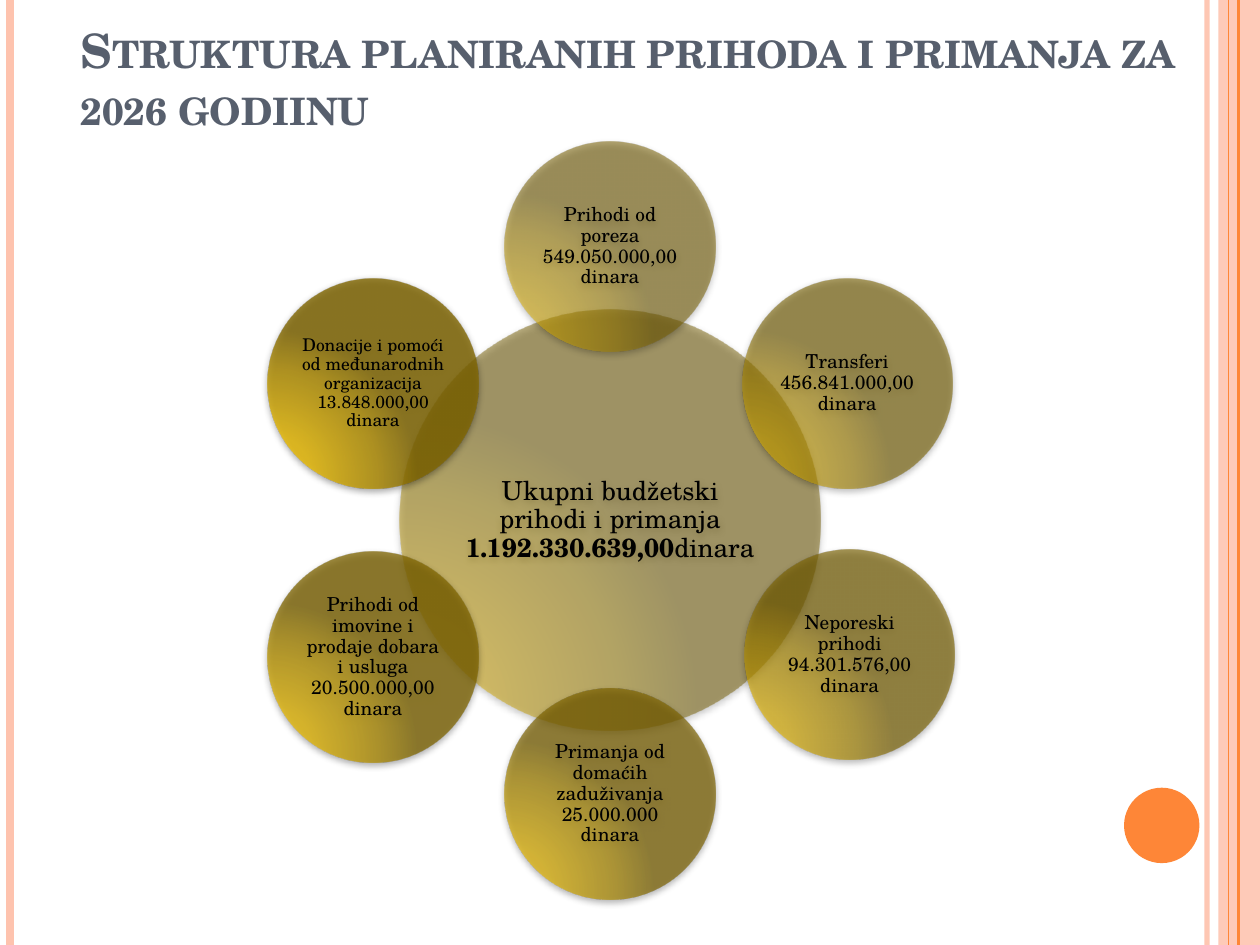
from math import cos, radians, sin
from lxml import etree
from pptx import Presentation
from pptx.dml.color import RGBColor
from pptx.enum.shapes import MSO_CONNECTOR as CONNECTOR, MSO_SHAPE as SHAPE
from pptx.enum.text import MSO_ANCHOR as ANCHOR, MSO_AUTO_SIZE as AUTO_SIZE, PP_ALIGN as ALIGN
from pptx.oxml import parse_xml
from pptx.oxml.ns import qn
from pptx.util import Cm, Pt

FONT = "TeX Gyre Schola"
NAMESPACE = "http://schemas.openxmlformats.org/drawingml/2006/main"
COLORS = {"peach": "FEC3AE", "orange": "FE8637", "slate": "575F6D", "black": "000000"}
GRADIENT_POSITIONS = (0, 30, 75, 100)


def set_alpha(fill_element, percent):
    color = fill_element.find(".//" + qn("a:srgbClr"))
    etree.SubElement(color, qn("a:alpha"), val=str(percent * 1000))


def add_circle(slide, center_x, center_y, diameter, gradient, opacity, runs, size, inset):
    shape = slide.shapes.add_shape(SHAPE.OVAL, Cm(center_x - diameter / 2),
                                   Cm(center_y - diameter / 2), Cm(diameter), Cm(diameter))
    shape.line.fill.background()
    stops = "".join(
        f'<a:gs pos="{position * 1000}"><a:srgbClr val="{color}">'
        f'<a:alpha val="{opacity * 1000}"/></a:srgbClr></a:gs>'
        for position, color in zip(GRADIENT_POSITIONS, gradient))
    fill = parse_xml(
        f'<a:gradFill xmlns:a="{NAMESPACE}" rotWithShape="1"><a:gsLst>{stops}</a:gsLst>'
        '<a:path path="circle"><a:fillToRect l="5000" t="100000" r="120000" b="10000"/>'
        '</a:path></a:gradFill>')
    shadow = parse_xml(
        f'<a:effectLst xmlns:a="{NAMESPACE}"><a:outerShdw blurRad="{Pt(4)}" dist="{Pt(1.6)}" '
        f'dir="5400000" rotWithShape="0"><a:srgbClr val="{COLORS["black"]}">'
        '<a:alpha val="42000"/></a:srgbClr></a:outerShdw></a:effectLst>')
    properties = shape._element.spPr
    properties.find(qn("a:prstGeom")).addnext(fill)
    properties.append(shadow)

    frame = shape.text_frame
    frame_format = {"word_wrap": True, "vertical_anchor": ANCHOR.MIDDLE,
                    "margin_left": Cm(inset), "margin_right": Cm(inset),
                    "margin_top": Cm(inset), "margin_bottom": Cm(inset)}
    for name, value in frame_format.items():
        setattr(frame, name, value)
    paragraph = frame.paragraphs[0]
    paragraph.alignment = ALIGN.CENTER
    paragraph.line_spacing = 0.9
    for text, bold in runs:
        run = paragraph.add_run()
        run.text = text
        for name, value in {"name": FONT, "size": Pt(size), "bold": bold}.items():
            setattr(run.font, name, value)
        run.font.color.rgb = RGBColor.from_string(COLORS["black"])


presentation = Presentation()
presentation.slide_width = Cm(25.4)
presentation.slide_height = Cm(19.05)
slide = presentation.slides.add_slide(presentation.slide_layouts[5])

title = slide.shapes.title
title_box = {"left": Cm(1.37), "top": Cm(0.69), "width": Cm(22.86), "height": Cm(2.16)}
for name, value in title_box.items():
    setattr(title, name, value)
title.text_frame.text = "Struktura planiranih prihoda i primanja za 2026 godiinu"
title.text_frame.auto_size = AUTO_SIZE.NONE
title.text_frame.vertical_anchor = ANCHOR.BOTTOM
title_paragraph = title.text_frame.paragraphs[0]
title_paragraph.alignment = ALIGN.LEFT
title_run = title_paragraph.runs[0]
for name, value in {"name": FONT, "size": Pt(27), "bold": True}.items():
    setattr(title_run.font, name, value)
title_run.font.color.rgb = RGBColor.from_string(COLORS["slate"])
title_run._r.get_or_add_rPr().set("cap", "small")

decorations = [
    (SHAPE.RECTANGLE, 24.56, 0, 0.84, 19.05, "peach", 87),
    (SHAPE.OVAL, 22.66, 15.88, 1.52, 1.52, "orange", 100),
]
for kind, left, top, width, height, color, opacity in decorations:
    shape = slide.shapes.add_shape(kind, Cm(left), Cm(top), Cm(width), Cm(height))
    shape.shadow.inherit = False
    shape.line.fill.background()
    shape.fill.solid()
    shape.fill.fore_color.rgb = RGBColor.from_string(COLORS[color])
    set_alpha(shape._element.spPr.find(qn("a:solidFill")), opacity)

stripes = [
    (24.33, "peach", 3, 93),
    (0.2, "peach", 4.5, 100),
    (24.97, "orange", 1.5, 100),
    (24.77, "orange", 0.75, 100),
]
for x, color, width, opacity in stripes:
    stripe = slide.shapes.add_connector(CONNECTOR.STRAIGHT, Cm(x), 0, Cm(x), Cm(19.05))
    stripe.line.width = Pt(width)
    stripe.line.color.rgb = RGBColor.from_string(COLORS[color])
    properties = stripe._element.spPr
    set_alpha(properties.find(qn("a:ln")), opacity)
    etree.SubElement(properties, qn("a:effectLst"))

center_x, center_y, hub_diameter, orbit = 12.3, 10.49, 8.48, 5.52
hub_runs = [("Ukupni budžetski prihodi i primanja ", False),
            ("1.192.330.639,00", True), ("dinara", False)]
add_circle(slide, center_x, center_y, hub_diameter,
           ("D7AC00", "D0A600", "9C7D00", "735C00"), 50, hub_runs, 15, 0.05)

satellites = [
    ("Prihodi od poreza 549.050.000,00 dinara",
     ("DBAF00", "D3A900", "9F7F00", "755E00"), 11, 0.05, 0),
    ("Transferi 456.841.000,00 dinara",
     ("DFB200", "D7AC00", "A28100", "776000"), 11, 0.05, 0),
    ("Neporeski prihodi 94.301.576,00 dinara",
     ("E3B500", "DBAF00", "A48300", "7A6100"), 11, 0.05, 0.05),
    ("Primanja od domaćih zaduživanja 25.000.000 dinara",
     ("E7B900", "DFB200", "A78600", "7C6300"), 11, 0.05, 0),
    ("Prihodi od imovine i prodaje dobara i usluga 20.500.000,00 dinara",
     ("EBBC00", "E2B500", "AA8800", "7E6500"), 11, 0.05, 0),
    ("Donacije i pomoći od međunarodnih organizacija 13.848.000,00 dinara",
     ("EEBF00", "E6B800", "AD8A00", "806600"), 10, 0.03, 0),
]
for index, (text, gradient, size, inset, nudge) in enumerate(satellites):
    angle = radians(60 * index - 90)
    add_circle(slide, center_x + orbit * cos(angle) + nudge, center_y + orbit * sin(angle) - nudge,
               hub_diameter / 2, gradient, 55 + 5 * index, [(text, False)], size, inset)

presentation.save("out.pptx")
